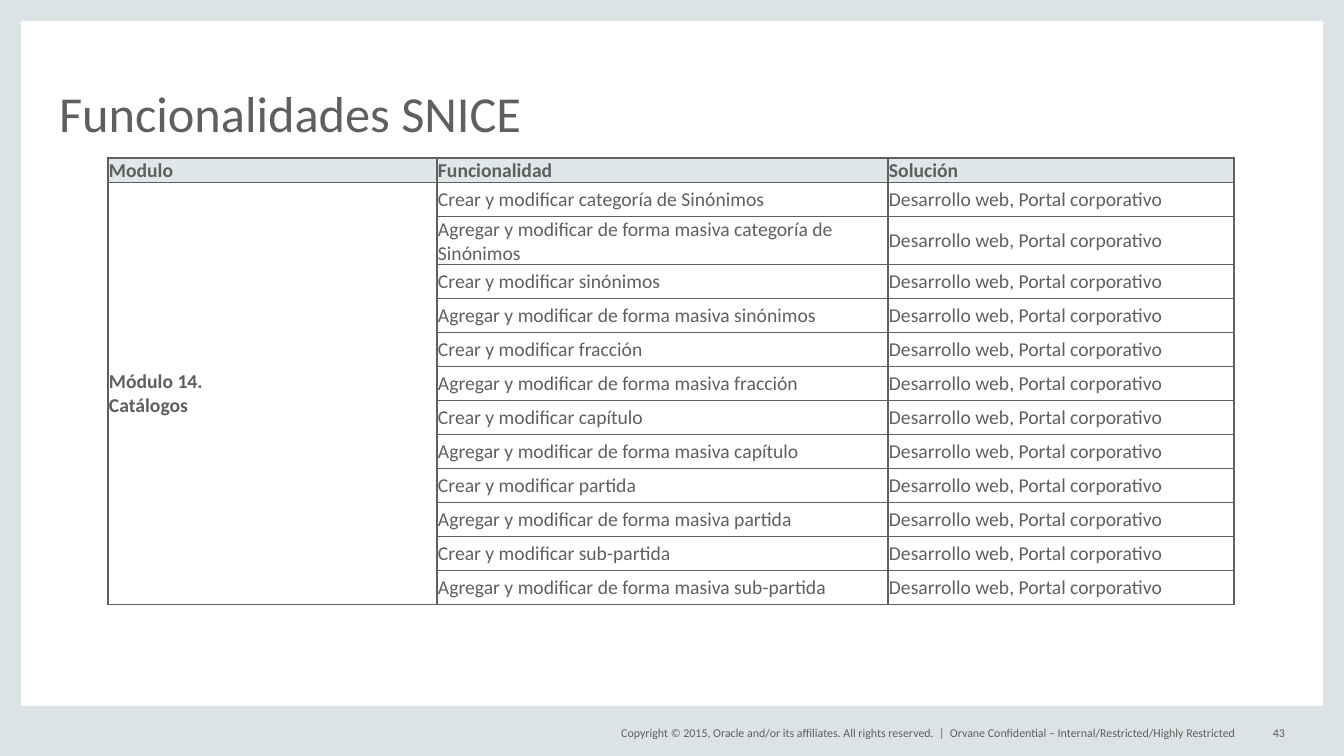
"""Build the SNICE functionality slide: framed page, title, module table and footer."""
import lxml.etree
import pptx
import pptx.dml.color
import pptx.enum.shapes
import pptx.enum.text
import pptx.oxml.ns
import pptx.util

PX = 914400 / 100.8
WIDTH, HEIGHT = 1344, 756
GRAY, FRAME, HEADER = "5F5F5F", "DCE3E4", "DFE7E9"
ALIGN = pptx.enum.text.PP_ALIGN
ANCHOR = pptx.enum.text.MSO_ANCHOR


def px(*lengths):
    return [pptx.util.Emu(round(length * PX)) for length in lengths]


def color(value):
    return pptx.dml.color.RGBColor.from_string(value)


presentation = pptx.Presentation()
presentation.slide_width, presentation.slide_height = px(WIDTH, HEIGHT)
slide = presentation.slides.add_slide(presentation.slide_layouts[6])

frame_bars = [
    (0, 0, 21, HEIGHT),
    (WIDTH - 21, 0, 21, HEIGHT),
    (0, 706, WIDTH, 50),
    (0, 0, WIDTH, 21),
]
for bar in frame_bars:
    shape = slide.shapes.add_shape(pptx.enum.shapes.MSO_SHAPE.RECTANGLE, *px(*bar))
    shape.shadow.inherit = False
    shape.fill.solid()
    shape.fill.fore_color.rgb = color(FRAME)
    shape.line.fill.background()

copyright_line = "Copyright © 2015, Oracle and/or its affiliates. All rights reserved.  |"
confidential_line = "Orvane Confidential – Internal/Restricted/Highly Restricted"
texts = [
    ("Funcionalidades SNICE", (59, 44, 1226, 98), 36, ALIGN.LEFT, ANCHOR.BOTTOM, True),
    (copyright_line, (593, 723, 352, 20), 8.5, ALIGN.RIGHT, ANCHOR.MIDDLE, False),
    (confidential_line, (950, 723, 302, 20), 8.5, ALIGN.LEFT, ANCHOR.MIDDLE, False),
    ("43", (1243, 723, 42, 20), 8.5, ALIGN.RIGHT, ANCHOR.MIDDLE, False),
]
for text, box, size, alignment, anchor, wrap in texts:
    text_frame = slide.shapes.add_textbox(*px(*box)).text_frame
    text_frame.margin_left = text_frame.margin_right = 0
    text_frame.margin_top = text_frame.margin_bottom = 0
    text_frame.word_wrap = wrap
    text_frame.vertical_anchor = anchor
    text_frame.text = text
    paragraph = text_frame.paragraphs[0]
    paragraph.alignment = alignment
    if size == 36:
        paragraph.line_spacing = 0.8
    font = paragraph.runs[0].font
    font.name, font.size = "Calibri", pptx.util.Pt(size)
    font.color.rgb = color(GRAY)

solution = "Desarrollo web, Portal corporativo"
catalogs = ["categoría de Sinónimos", "sinónimos", "fracción", "capítulo", "partida", "sub-partida"]
rows = [("Modulo", "Funcionalidad", "Solución")]
for catalog in catalogs:
    for action in ("Crear y modificar", "Agregar y modificar de forma masiva"):
        rows.append(("", f"{action} {catalog}", solution))
rows[1] = ("Módulo 14.\vCatálogos", *rows[1][1:])

column_widths = [329, 451, 346]
row_heights = [23] + [34] * (len(rows) - 1)
table = slide.shapes.add_table(
    len(rows), len(column_widths), *px(108, 158, sum(column_widths), sum(row_heights))
).table
table.first_row = table.horz_banding = False
for column, width in zip(table.columns, px(*column_widths)):
    column.width = width
for row, height in zip(table.rows, px(*row_heights)):
    row.height = height

for row_index, row in enumerate(rows):
    for column_index, text in enumerate(row):
        cell = table.cell(row_index, column_index)
        cell.margin_left, cell.margin_right, cell.margin_top, cell.margin_bottom = px(1, 1, 1, 0)
        cell.vertical_anchor = ANCHOR.MIDDLE
        properties = cell._tc.get_or_add_tcPr()
        for side in ("a:lnL", "a:lnR", "a:lnT", "a:lnB"):
            border = lxml.etree.SubElement(properties, pptx.oxml.ns.qn(side), w="12700")
            border_fill = lxml.etree.SubElement(border, pptx.oxml.ns.qn("a:solidFill"))
            lxml.etree.SubElement(border_fill, pptx.oxml.ns.qn("a:srgbClr"), val=GRAY)
        if row_index == 0:
            cell.fill.solid()
            cell.fill.fore_color.rgb = color(HEADER)
        else:
            cell.fill.background()
        cell.text = text
        paragraph = cell.text_frame.paragraphs[0]
        for font in [paragraph.font] + [run.font for run in paragraph.runs]:
            font.name, font.size = "Calibri", pptx.util.Pt(14)
            font.bold = row_index == 0 or column_index == 0
            font.color.rgb = color(GRAY)
table.cell(1, 0).merge(table.cell(len(rows) - 1, 0))

presentation.save("out.pptx")
